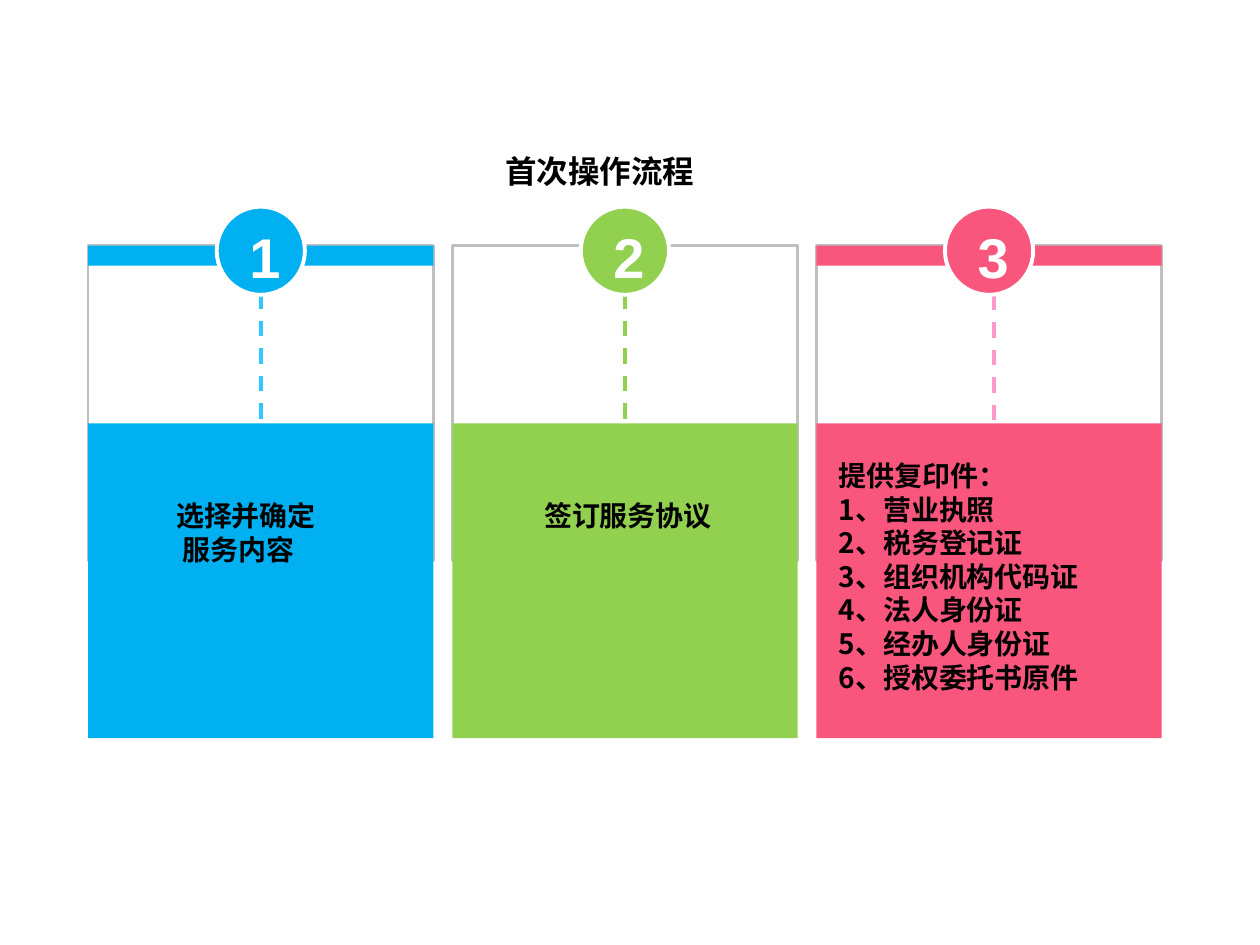
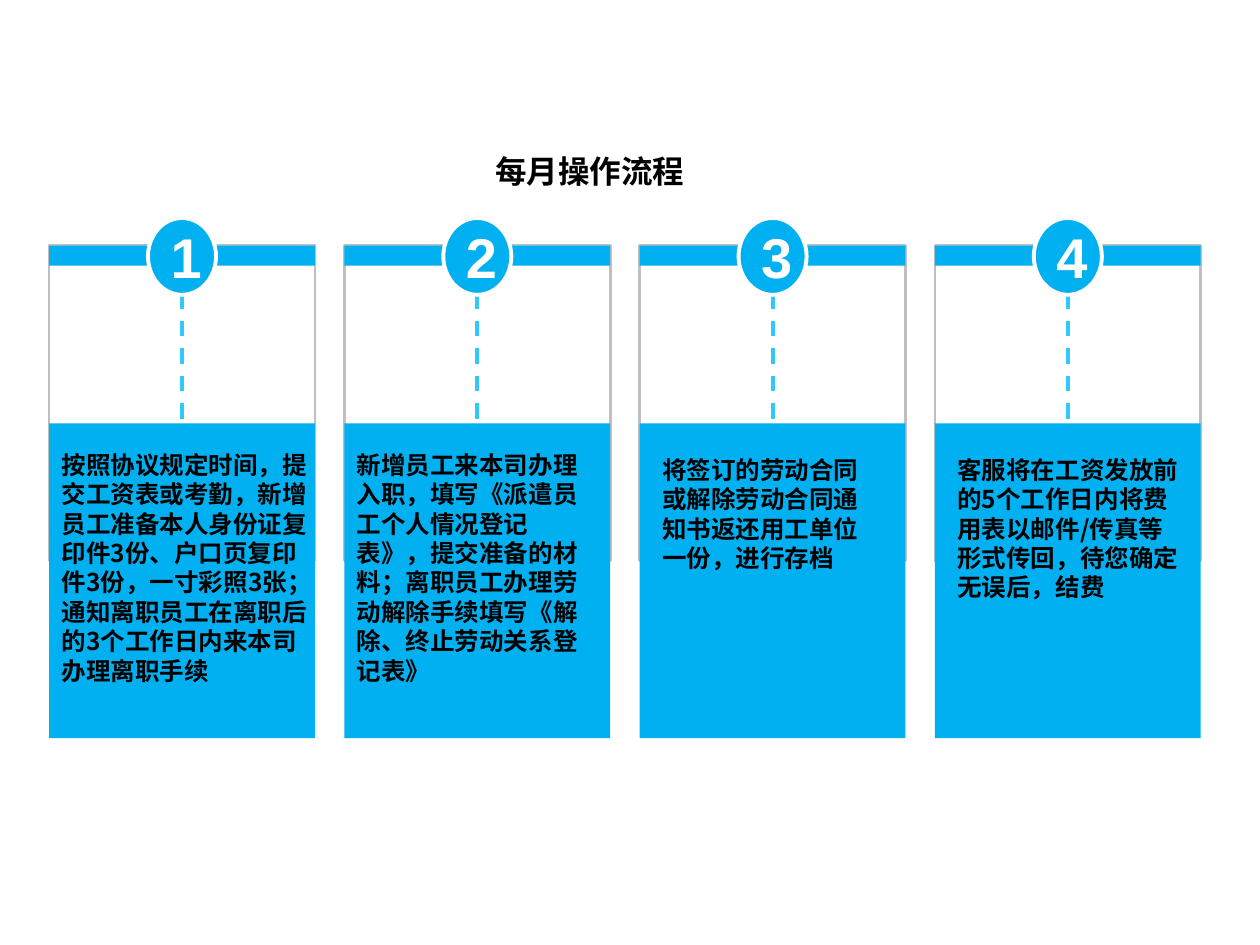
from lxml.etree import SubElement
from pptx import Presentation
from pptx.dml.color import RGBColor
from pptx.enum.dml import MSO_LINE
from pptx.enum.shapes import MSO_CONNECTOR, MSO_SHAPE
from pptx.enum.text import MSO_ANCHOR, MSO_AUTO_SIZE, PP_ALIGN
from pptx.oxml.ns import qn
from pptx.util import Inches, Pt

BLUE, GREEN, PINK = "00B0F0", "92D050", "F8567D"
SKY, ROSE = "2FC9FF", "FF99CC"
WHITE, BLACK, GREY = "FFFFFF", "000000", "BFBFBF"
CJK, LATIN = "Noto Sans CJK SC", "Arial"
TOP, BAR, MID, BOX = 1.95, 0.16, 3.36, 2.5


def rgb(code):
    return RGBColor.from_string(code)


def write(frame, text, size=16, color=BLACK, face=CJK, indents=()):
    """Fill a frame with bold text, one paragraph a line, indents in inches."""
    frame.word_wrap = True
    frame.auto_size = MSO_AUTO_SIZE.NONE
    frame.vertical_anchor = MSO_ANCHOR.TOP
    for num, line in enumerate(text.split("\n")):
        para = frame.add_paragraph() if num else frame.paragraphs[0]
        para.alignment = PP_ALIGN.LEFT
        props = para._p.get_or_add_pPr()
        props.set("hangingPunct", "0")
        if num < len(indents):
            props.set("marL", str(Inches(indents[num])))
        run = para.add_run()
        run.text = line
        font = run.font
        font.name, font.size, font.bold = face, Pt(size), True
        font.color.rgb = rgb(color)
        SubElement(run._r.get_or_add_rPr(), qn("a:ea"), typeface=face)


class Deck:
    def __init__(self):
        self.show = Presentation()
        self.show.slide_width = Inches(10)
        self.show.slide_height = Inches(7.5)
        self.slide = None

    def start(self, title, left):
        """Add a slide with its heading."""
        self.slide = self.show.slides.add_slide(self.show.slide_layouts[5])
        head = self.slide.shapes.title
        head.left, head.top = Inches(left), Inches(1.16)
        head.width, head.height = Inches(3.28), Inches(0.4)
        write(head.text_frame, title, size=18)

    def shape(self, kind, place, fill=None, line=None, width=1.5):
        item = self.slide.shapes.add_shape(kind, *map(Inches, place))
        item.shadow.inherit = False
        if fill:
            item.fill.solid()
            item.fill.fore_color.rgb = rgb(fill)
        else:
            item.fill.background()
        if line:
            item.line.color.rgb = rgb(line)
            item.line.width = Pt(width)
        else:
            item.line.fill.background()

    def dash(self, x, top, color):
        """Draw a dashed vertical line."""
        item = self.slide.shapes.add_connector(
            MSO_CONNECTOR.STRAIGHT, *map(Inches, (x, top, x, top + 1.25)))
        item.line.color.rgb = rgb(color)
        item.line.width = Pt(2.25)
        item.line.dash_style = MSO_LINE.DASH
        SubElement(item._element.spPr, qn("a:effectLst"))

    def text(self, text, place, **form):
        box = self.slide.shapes.add_textbox(*map(Inches, place))
        write(box.text_frame, text, **form)

    def panel(self, num, left, wide, disc, fill=BLUE, dash=SKY, bar=True,
              shift=0, start=TOP + BAR):
        """Draw one numbered step; disc is the width and height of its badge."""
        rect, mid = MSO_SHAPE.RECTANGLE, left + wide / 2
        wd, ht = disc
        self.dash(mid + shift, start, dash)
        self.shape(rect, (left, TOP, wide, BOX), line=GREY)
        self.shape(rect, (left, MID, wide, BOX), fill=fill)
        if bar:
            self.shape(rect, (left, TOP, wide, BAR), fill=fill)
        self.shape(MSO_SHAPE.OVAL, (mid - wd / 2, 2.34 - ht, wd, ht),
                   fill=fill, line=WHITE, width=2.25)
        self.text(str(num), (mid - 0.19, 1.72, 0.31, 0.64),
                  size=32, color=WHITE, face=LATIN)


def first(deck):
    deck.start("首次操作流程", 3.91)
    looks = [dict(),
             dict(fill=GREEN, dash=GREEN, bar=False),
             dict(fill=PINK, dash=ROSE, shift=0.04, start=2.34)]
    for num, look in enumerate(looks):
        deck.panel(num + 1, 0.7 + 2.89 * num, 2.74, (0.7, 0.7), **look)
    deck.text("选择并确定\n服务内容", (1.25, 3.91, 1.95, 0.64),
              indents=(0.05, 0.1))
    deck.text("签订服务协议", (4.22, 3.91, 1.95, 0.67))
    deck.text("提供复印件：\n1、营业执照\n2、税务登记证\n3、组织机构代码证\n"
              "4、法人身份证\n5、经办人身份证\n6、授权委托书原件",
              (6.56, 3.59, 2.58, 2.02))


def monthly(deck):
    deck.start("每月操作流程", 3.83)
    steps = [
        ("按照协议规定时间，提交工资表或考勤，新增员工准备本人身份证复印件3份、"
         "户口页复印件3份，一寸彩照3张；通知离职员工在离职后的3个工作日内来"
         "本司办理离职手续", 0, 3.52, 2.19),
        ("新增员工来本司办理入职，填写《派遣员工个人情况登记表》，提交准备的材料；"
         "离职员工办理劳动解除手续填写《解除、终止劳动关系登记表》",
         0, 3.52, 2.03),
        ("将签订的劳动合同或解除劳动合同通知书返还用工单位一份，进行存档",
         0.08, 3.56, 1.87),
        ("客服将在工资发放前的5个工作日内将费用表以邮件/传真等形式传回，"
         "待您确定无误后，结费", 0.08, 3.56, 1.97)]
    gap = (7.42 - 0.39) / (len(steps) - 1)
    for num, (text, inset, top, wide) in enumerate(steps):
        left = 0.39 + gap * num
        deck.panel(num + 1, left, 2.11, (0.54, 0.61))
        deck.text(text, (left + inset, top, wide, 1.99), size=14)


def main():
    deck = Deck()
    first(deck)
    monthly(deck)
    deck.show.save("out.pptx")


if __name__ == "__main__":
    main()
